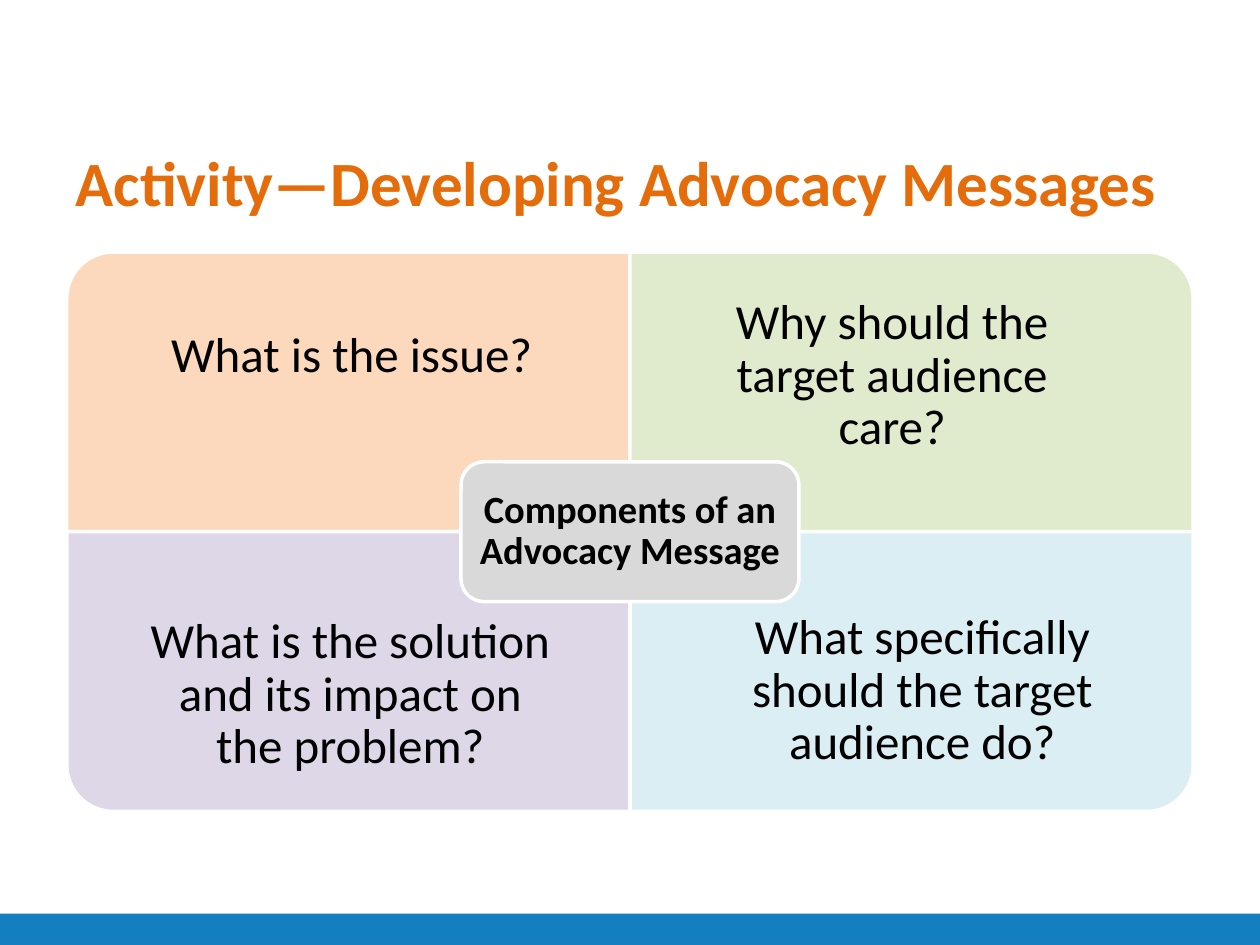
from lxml.etree import SubElement
from pptx import Presentation
from pptx.dml.color import RGBColor
from pptx.enum.shapes import MSO_SHAPE
from pptx.enum.text import MSO_ANCHOR, PP_ALIGN
from pptx.oxml.ns import qn
from pptx.util import Inches, Pt

COLORS = {
    "title": "E46C0A", "bar": "137FC1", "issue": "FCD5B5", "reason": "D7E4BD",
    "solution": "CCC1DA", "action": "B7DEE8", "center": "D9D9D9",
    "edge": "FFFFFF", "text": "000000",
}

presentation = Presentation()
presentation.slide_width, presentation.slide_height = Inches(10), Inches(7.5)
slide = presentation.slides.add_slide(presentation.slide_layouts[5])
column, row = Inches(4.47), Inches(2.22)
middle_x, middle_y = Inches(5), Inches(4.22)


def add_panel(kind, left, top, width, height, color, alpha=100, line=2):
    shape = slide.shapes.add_shape(kind, int(left), int(top), int(width), int(height))
    shape.shadow.inherit = False
    shape.fill.solid()
    shape.fill.fore_color.rgb = RGBColor.from_string(COLORS[color])
    if alpha < 100:
        fill_color = shape._element.spPr.find(qn("a:solidFill")).find(qn("a:srgbClr"))
        SubElement(fill_color, qn("a:alpha"), val=str(alpha * 1000))
    if line:
        shape.line.color.rgb = RGBColor.from_string(COLORS["edge"])
        shape.line.width = Pt(line)
    else:
        shape.line.fill.background()
    return shape


def write(shape, text, frame_format, paragraph_format, font_format, color):
    frame = shape.text_frame
    frame.text = text
    paragraph = frame.paragraphs[0]
    font = paragraph.runs[0].font
    targets = (
        (frame, {"word_wrap": True, **frame_format}),
        (paragraph, paragraph_format),
        (font, {"name": "Calibri", **font_format}),
    )
    for target, values in targets:
        for name, value in values.items():
            setattr(target, name, value)
    font.color.rgb = RGBColor.from_string(COLORS[color])


add_panel(MSO_SHAPE.RECTANGLE, 0, Inches(7.25), Inches(10), Inches(0.25), "bar", line=0)

title = slide.shapes.title
title_place = {"left": 0.5, "top": 1.05, "width": 9, "height": 0.78}
for name, value in title_place.items():
    setattr(title, name, Inches(value))
write(
    title, "Activity—Developing Advocacy Messages",
    {"vertical_anchor": MSO_ANCHOR.MIDDLE}, {"alignment": PP_ALIGN.LEFT},
    {"size": Pt(36), "bold": True}, "title",
)

quadrants = [
    ("issue", 0, 0, 270, 90),
    ("reason", 1, 0, 0, 77),
    ("solution", 0, 1, 180, 63),
    ("action", 1, 1, 90, 50),
]
for color, column_index, row_index, rotation, alpha in quadrants:
    center_x = middle_x + (column_index - 0.5) * column
    center_y = middle_y + (row_index - 0.5) * row
    width, height = (row, column) if rotation % 180 else (column, row)
    quadrant = add_panel(
        MSO_SHAPE.ROUND_1_RECTANGLE, center_x - width / 2, center_y - height / 2,
        width, height, color, alpha,
    )
    quadrant.rotation = rotation

center_width, center_height = column * 0.6, row * 0.5
center = add_panel(
    MSO_SHAPE.ROUNDED_RECTANGLE, middle_x - center_width / 2,
    middle_y - center_height / 2, center_width, center_height, "center",
)
margins = ("margin_left", "margin_right", "margin_top", "margin_bottom")
write(
    center, "Components of an Advocacy Message",
    {"vertical_anchor": MSO_ANCHOR.MIDDLE, **dict.fromkeys(margins, Inches(0.08))},
    {"alignment": PP_ALIGN.CENTER, "line_spacing": 0.9},
    {"size": Pt(22), "bold": True}, "text",
)

questions = [
    ("What is the issue?", 1, 2.57, 3.58, 0.61),
    ("Why should the target audience care?", 5.29, 2.31, 3.58, 1.13),
    ("What is the solution and its impact on the problem?", 1.03, 4.84, 3.5, 1.47),
    ("What specifically should the target audience do?", 5.5, 4.81, 3.64, 1.52),
]
for text, *place in questions:
    question = slide.shapes.add_textbox(*map(Inches, place))
    write(
        question, text, {"vertical_anchor": MSO_ANCHOR.TOP},
        {"alignment": PP_ALIGN.CENTER, "line_spacing": Pt(30)},
        {"size": Pt(28)}, "text",
    )

presentation.save("out.pptx")
